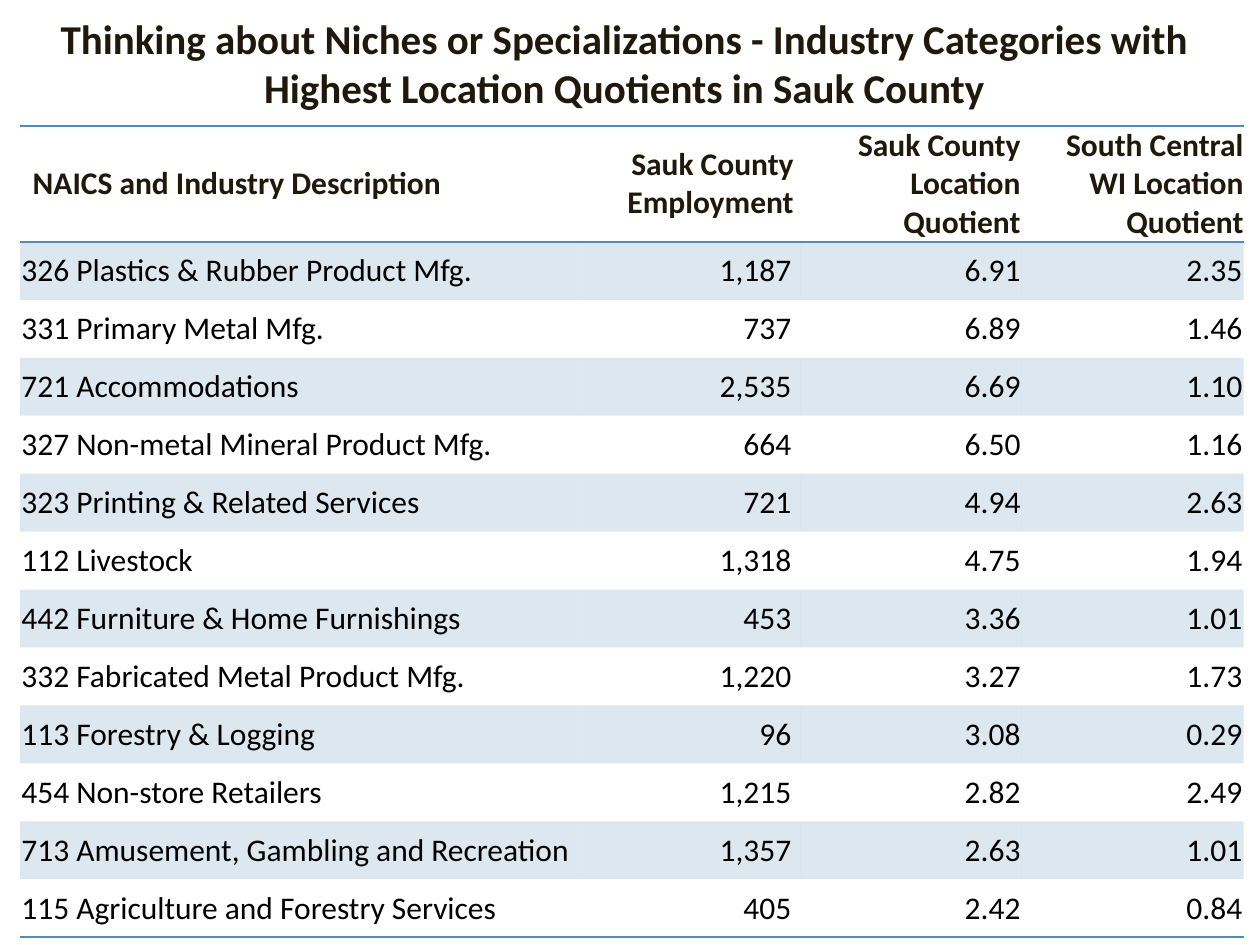
from lxml import etree
from pptx import Presentation
from pptx import util as u
from pptx.dml import color
from pptx.enum import text
from pptx.oxml import ns

COLORS = {"heading": "20180A", "body": "000000", "accent": "548BB7"}
FONT = "Calibri"
HEADERS = ["NAICS and Industry Description", "Sauk County Employment",
           "Sauk County Location Quotient", "South Central WI Location Quotient"]
INDUSTRIES = [
    ("326 Plastics & Rubber Product Mfg.", "1,187", "6.91", "2.35"),
    ("331 Primary Metal Mfg.", "737", "6.89", "1.46"),
    ("721 Accommodations", "2,535", "6.69", "1.10"),
    ("327 Non-metal Mineral Product Mfg.", "664", "6.50", "1.16"),
    ("323 Printing & Related Services", "721", "4.94", "2.63"),
    ("112 Livestock", "1,318", "4.75", "1.94"),
    ("442 Furniture & Home Furnishings", "453", "3.36", "1.01"),
    ("332 Fabricated Metal Product Mfg.", "1,220", "3.27", "1.73"),
    ("113 Forestry & Logging", "96", "3.08", "0.29"),
    ("454 Non-store Retailers", "1,215", "2.82", "2.49"),
    ("713 Amusement, Gambling and Recreation", "1,357", "2.63", "1.01"),
    ("115 Agriculture and Forestry Services", "405", "2.42", "0.84"),
]
COLUMN_WIDTHS = [4.43, 1.76, 1.76, 1.76]
HEADER_MARGINS = [(0.1, 0.05), (0.1, 0.05), (0.01, 0.01), (0.01, 0)]
BODY_MARGINS = [(0.01, 0.01), (0.01, 0.07), (0.01, 0.01), (0.01, 0.01)]
ROW_HEIGHT = 0.46


def style_paragraph(paragraph, size, tone, bold, alignment):
    paragraph.alignment = alignment
    for run in paragraph.runs:
        run.font.name = FONT
        run.font.size = u.Pt(size)
        run.font.bold = bold
        run.font.color.rgb = color.RGBColor.from_string(COLORS[tone])


def set_borders(cell, ruled_sides):
    properties = cell._tc.get_or_add_tcPr()
    for side in "LRTB":
        line = etree.SubElement(properties, ns.qn(f"a:ln{side}"), w=str(u.Pt(1)))
        if side in ruled_sides:
            fill = etree.SubElement(line, ns.qn("a:solidFill"))
            etree.SubElement(fill, ns.qn("a:srgbClr"), val=COLORS["accent"])
        else:
            etree.SubElement(line, ns.qn("a:noFill"))


presentation = Presentation()
presentation.slide_width = u.Inches(10)
presentation.slide_height = u.Inches(7.5)
slide = presentation.slides.add_slide(presentation.slide_layouts[6])

title = slide.shapes.add_textbox(u.Inches(0.08), u.Inches(0.25), u.Inches(9.75), u.Inches(0.5))
title_frame = title.text_frame
title_frame.word_wrap = True
title_frame.vertical_anchor = text.MSO_ANCHOR.MIDDLE
title_frame.text = ("Thinking about Niches or Specializations - Industry Categories with "
                    "Highest Location Quotients in Sauk County")
style_paragraph(title_frame.paragraphs[0], 23.4, "heading", True, text.PP_ALIGN.CENTER)

rows = [HEADERS, *INDUSTRIES]
last_row = len(rows) - 1
table = slide.shapes.add_table(
    len(rows), len(HEADERS), u.Inches(0.16), u.Inches(1),
    u.Inches(sum(COLUMN_WIDTHS)), u.Inches(ROW_HEIGHT * (len(rows) + 1))).table
table.first_row = False
table.horz_banding = False
for column, width in zip(table.columns, COLUMN_WIDTHS):
    column.width = u.Inches(width)

for row_index, values in enumerate(rows):
    is_header = row_index == 0
    table.rows[row_index].height = u.Inches(ROW_HEIGHT * (2 if is_header else 1))
    ruled_sides = "TB" if is_header else "T" if row_index == 1 else "B" if row_index == last_row else ""
    margins = HEADER_MARGINS if is_header else BODY_MARGINS
    for column_index, value in enumerate(values):
        cell = table.cell(row_index, column_index)
        cell.text = value
        cell.vertical_anchor = text.MSO_ANCHOR.MIDDLE
        cell.margin_left, cell.margin_right = map(u.Inches, margins[column_index])
        cell.margin_top = cell.margin_bottom = 0
        alignment = text.PP_ALIGN.RIGHT if column_index else text.PP_ALIGN.LEFT
        style_paragraph(cell.text_frame.paragraphs[0], 18,
                        "heading" if is_header else "body", is_header, alignment)
        set_borders(cell, ruled_sides)
        if row_index % 2:
            cell.fill.solid()
            cell.fill.fore_color.rgb = color.RGBColor.from_string(COLORS["accent"])
            tint = cell._tc.tcPr.find(ns.qn("a:solidFill")).find(ns.qn("a:srgbClr"))
            etree.SubElement(tint, ns.qn("a:alpha"), val="20000")
        else:
            cell.fill.background()

presentation.save("out.pptx")
